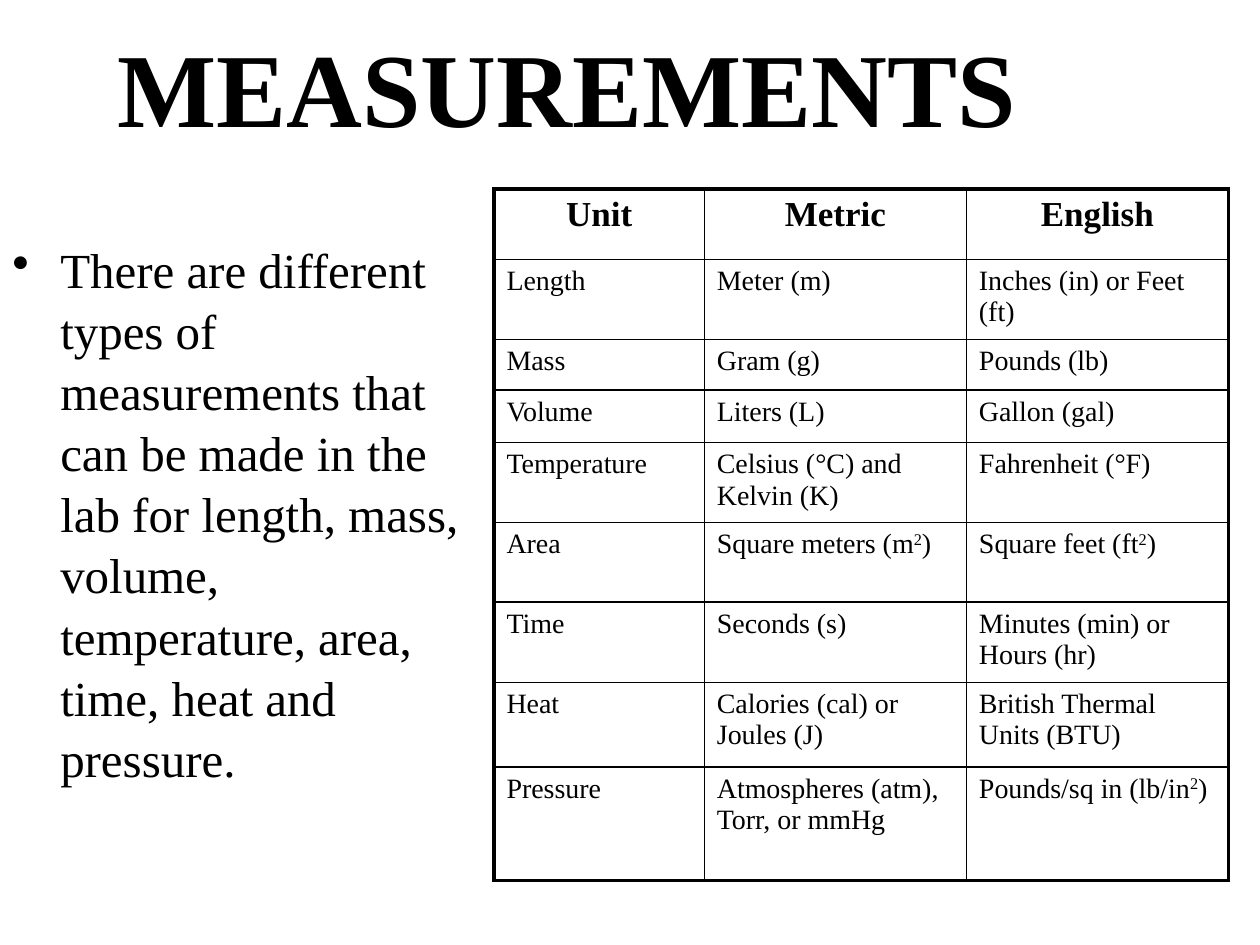
from dataclasses import dataclass

from lxml import etree
from pptx import Presentation
from pptx.dml.color import RGBColor
from pptx.enum.text import MSO_ANCHOR, PP_ALIGN
from pptx.oxml.ns import qn
from pptx.util import Inches, Pt

CENTER, LEFT = PP_ALIGN.CENTER, PP_ALIGN.LEFT
MIDDLE, TOP = MSO_ANCHOR.MIDDLE, MSO_ANCHOR.TOP


@dataclass(frozen=True)
class Theme:
    """Colours, font, type sizes and rule widths."""
    ink: str = "000000"
    font: str = "Times New Roman"
    title: int = 60
    body: int = 28
    header: int = 20
    cell: int = 16
    thin: float = 1
    thick: float = 2.25


@dataclass(frozen=True)
class Row:
    """One table row, with ^ before a superscript character."""
    height: float
    texts: tuple[str, str, str]


THEME = Theme()
COLUMNS = (1.67, 2.08, 2.08)
ROWS = (
    Row(0.56, ("Unit", "Metric", "English")),
    Row(0.52, ("Length", "Meter (m)", "Inches (in) or Feet (ft)")),
    Row(0.4, ("Mass", "Gram (g)", "Pounds (lb)")),
    Row(0.42, ("Volume", "Liters (L)", "Gallon (gal)")),
    Row(0.55, ("Temperature", "Celsius (°C) and Kelvin (K)", "Fahrenheit (°F)")),
    Row(0.63, ("Area", "Square meters (m^2)", "Square feet (ft^2)")),
    Row(0.64, ("Time", "Seconds (s)", "Minutes (min) or Hours (hr)")),
    Row(0.67, ("Heat", "Calories (cal) or Joules (J)", "British Thermal Units (BTU)")),
    Row(0.9, ("Pressure", "Atmospheres (atm), Torr, or mmHg", "Pounds/sq in (lb/in^2)")),
)
TITLE = "MEASUREMENTS"
BODY = ("There are different types of measurements that can be made in the lab "
        "for length, mass, volume, temperature, area, time, heat and pressure.")


def add_run(p, text: str, size: int, bold: bool, raised: bool = False) -> None:
    """Add one styled run."""
    r = p.add_run()
    r.text = text
    r.font.name, r.font.size, r.font.bold = THEME.font, Pt(size), bold
    r.font.color.rgb = RGBColor.from_string(THEME.ink)
    if raised:
        r.font._element.set("baseline", "30000")


def write(p, text: str, size: int, bold: bool = False, align=LEFT) -> None:
    """Fill a paragraph, raising the character after a caret."""
    p.alignment = align
    head, _, tail = text.partition("^")
    add_run(p, head, size, bold)
    if tail:
        add_run(p, tail[0], size, bold, raised=True)
        add_run(p, tail[1:], size, bold)


def space_before(p) -> None:
    """Set the space before a paragraph to 20 percent."""
    spc = etree.SubElement(p._p.get_or_add_pPr(), qn("a:spcBef"))
    etree.SubElement(spc, qn("a:spcPct"), val="20000")


def add_bullet(p, indent: float) -> None:
    """Give a paragraph a hanging round bullet."""
    pPr = p._p.get_or_add_pPr()
    pPr.set("marL", str(Inches(indent)))
    pPr.set("indent", str(Inches(-indent)))
    etree.SubElement(pPr, qn("a:buChar"), char="•")


def add_text(s, left: float, top: float, width: float, height: float, anchor):
    """Add a wrapping text box and return its first paragraph."""
    tf = s.shapes.add_textbox(*map(Inches, (left, top, width, height))).text_frame
    tf.word_wrap, tf.vertical_anchor = True, anchor
    return tf.paragraphs[0]


def set_border(cell, side: str, width: float) -> None:
    """Draw one solid cell border."""
    ln = etree.SubElement(cell._tc.get_or_add_tcPr(), qn(f"a:ln{side}"), w=str(Pt(width)))
    fill = etree.SubElement(ln, qn("a:solidFill"))
    etree.SubElement(fill, qn("a:srgbClr"), val=THEME.ink)


def add_units_table(s, left: float, top: float) -> None:
    """Add the table of units with a thick outer frame."""
    size = sum(COLUMNS), sum(row.height for row in ROWS)
    table = s.shapes.add_table(len(ROWS), len(COLUMNS), *map(Inches, (left, top, *size))).table
    table.first_row = table.horz_banding = False
    for column, width in zip(table.columns, COLUMNS):
        column.width = Inches(width)
    for i, row in enumerate(ROWS):
        table.rows[i].height = Inches(row.height)
        for j, text in enumerate(row.texts):
            cell = table.cell(i, j)
            p = cell.text_frame.paragraphs[0]
            if i == 0:
                write(p, text, THEME.header, bold=True, align=CENTER)
            else:
                write(p, text, THEME.cell)
            space_before(p)
            outer = {"L": j == 0, "R": j == len(COLUMNS) - 1,
                     "T": i == 0, "B": i == len(ROWS) - 1}
            for side, is_outer in outer.items():
                set_border(cell, side, THEME.thick if is_outer else THEME.thin)
            cell.fill.background()


def main() -> None:
    """Build the measurements slide."""
    prs = Presentation()
    prs.slide_width, prs.slide_height = Inches(10), Inches(7.5)
    s = prs.slides.add_slide(prs.slide_layouts[6])
    write(add_text(s, 0, 0.05, 9, 1.25, MIDDLE), TITLE, THEME.title, bold=True, align=CENTER)
    p = add_text(s, 0, 1.83, 3.75, 4.95, TOP)
    write(p, BODY, THEME.body)
    p.line_spacing = 1.04
    space_before(p)
    add_bullet(p, 0.38)
    add_units_table(s, 3.92, 1.5)
    prs.save("out.pptx")


if __name__ == "__main__":
    main()
